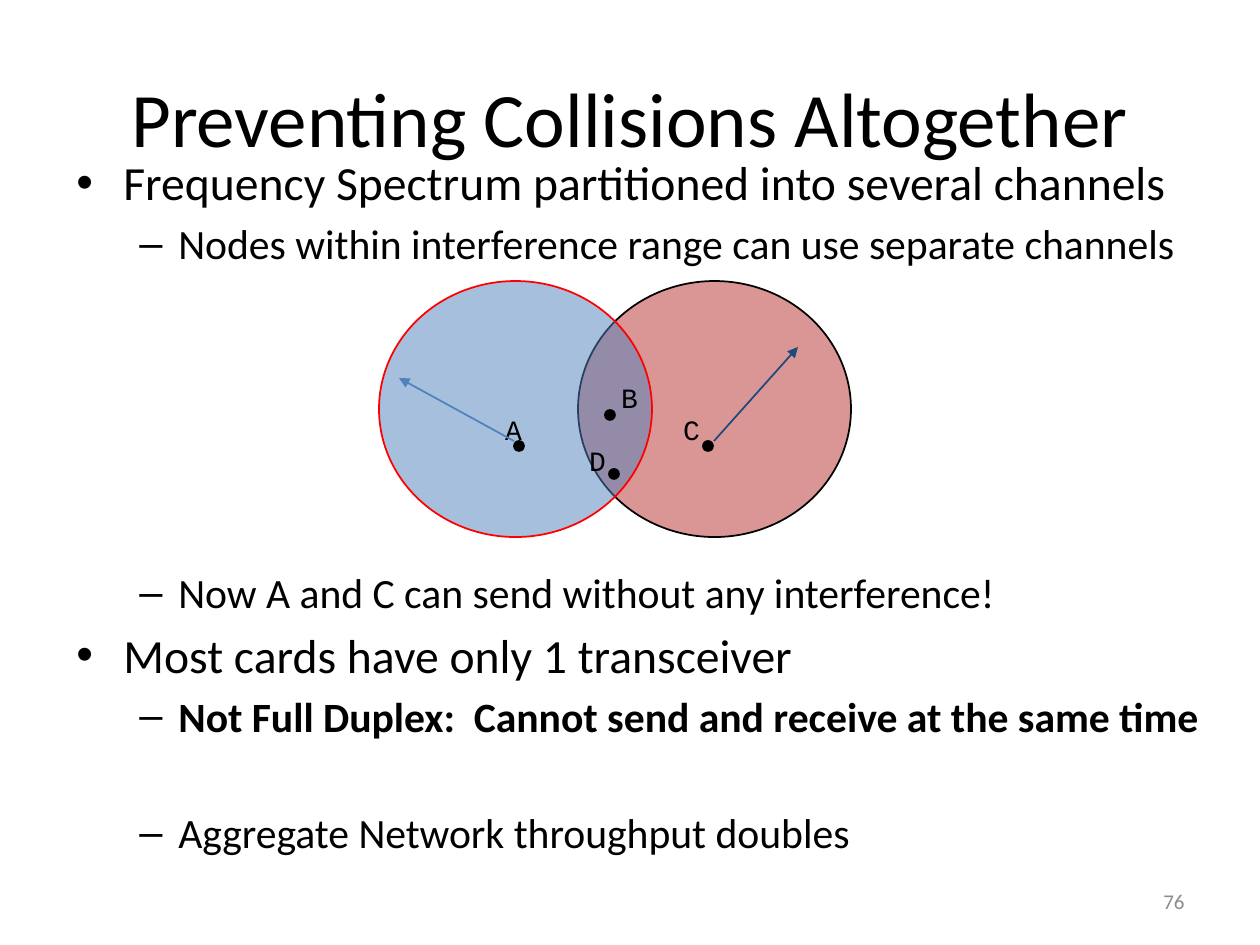
from lxml.etree import SubElement
from pptx import Presentation
from pptx.dml.color import RGBColor
from pptx.enum.shapes import MSO_CONNECTOR, MSO_SHAPE
from pptx.enum.text import MSO_ANCHOR, PP_ALIGN
from pptx.oxml.ns import qn
from pptx.util import Emu, Inches, Pt

PX_PER_INCH = 126
BLACK = RGBColor(0x00, 0x00, 0x00)
RED = RGBColor(0xFF, 0x00, 0x00)
ROSE = RGBColor(0xD9, 0x96, 0x94)
BLUE = RGBColor(0x4F, 0x81, 0xBD)
NAVY = RGBColor(0x1F, 0x49, 0x7D)
GRAY = RGBColor(0x8C, 0x8C, 0x8C)

# Bullet and size, left margin and hanging indent for each outline level
LEVELS = [("•", 27.2, 47, 47), ("–", 23.8, 102, 39)]

# Level, text, space before in points, bold
OUTLINE = [
    (0, "Frequency Spectrum partitioned into several channels", 0, False),
    (1, "Nodes within interference range can use separate channels", 4.3, False),
    (1, "Now A and C can send without any interference!", 171, False),
    (0, "Most cards have only 1 transceiver", 5, False),
    (1, "Not Full Duplex:  Cannot send and receive at the same time", 4.3, True),
    (1, "Aggregate Network throughput doubles", 37.8, False),
]

# Name, dot position, label position
NODES = [
    ("A", (514, 441), (491, 406)),
    ("B", (605, 410), (607, 374)),
    ("C", (703, 441), (669, 406)),
    ("D", (609, 469), (575, 437)),
]


def px(*lengths):
    return [Emu(round(length * 914400 / PX_PER_INCH)) for length in lengths]


class SlideBuilder:
    """Holds the text style and the slide being drawn."""

    body_font = "Calibri"
    label_font = "Courier New"

    def __init__(self, slide):
        self.slide = slide

    def style(self, paragraph, size, font=body_font, color=BLACK, align=PP_ALIGN.LEFT, bold=False):
        paragraph.alignment = align
        paragraph.font.name = font
        paragraph.font.size = Pt(size)
        paragraph.font.bold = bold
        paragraph.font.color.rgb = color

    def title(self, text, *box):
        shape = self.slide.shapes.title
        shape.left, shape.top, shape.width, shape.height = px(*box)
        shape.text_frame.text = text
        shape.text_frame.vertical_anchor = MSO_ANCHOR.MIDDLE
        self.style(shape.text_frame.paragraphs[0], 44, align=PP_ALIGN.CENTER)

    def text(self, text, box, size, wrap=True, anchor=MSO_ANCHOR.TOP, **style):
        frame = self.slide.shapes.add_textbox(*px(*box)).text_frame
        frame.word_wrap = wrap
        frame.vertical_anchor = anchor
        frame.text = text
        self.style(frame.paragraphs[0], size, **style)

    def outline(self, items, *box):
        frame = self.slide.shapes.add_textbox(*px(*box)).text_frame
        frame.word_wrap = True
        for index, (level, text, space, bold) in enumerate(items):
            paragraph = frame.add_paragraph() if index else frame.paragraphs[0]
            paragraph.text = text
            paragraph.level = level
            paragraph.space_before = Pt(space)
            bullet, size, margin, hanging = LEVELS[level]
            properties = paragraph._p.get_or_add_pPr()
            margin, hanging = px(margin, hanging)
            properties.set("marL", str(margin))
            properties.set("indent", str(-hanging))
            SubElement(properties, qn("a:buFont"), typeface="Arial")
            SubElement(properties, qn("a:buChar"), char=bullet)
            self.style(paragraph, size, bold=bold)

    def ellipse(self, box, fill, line, opacity=100):
        shape = self.slide.shapes.add_shape(MSO_SHAPE.OVAL, *px(*box))
        shape.shadow.inherit = False
        shape.fill.solid()
        shape.fill.fore_color.rgb = fill
        shape.line.color.rgb = line
        shape.line.width = Pt(1)
        if opacity < 100:
            color = shape.fill._xPr.find(qn("a:solidFill"))[0]
            SubElement(color, qn("a:alpha"), val=str(opacity * 1000))

    def arrow(self, start, end, color):
        connector = self.slide.shapes.add_connector(MSO_CONNECTOR.STRAIGHT, *px(*start, *end))
        connector.line.color.rgb = color
        connector.line.width = Pt(1)
        SubElement(connector.line._get_or_add_ln(), qn("a:tailEnd"), type="triangle")
        SubElement(connector._element.spPr, qn("a:effectLst"))


def main():
    presentation = Presentation()
    presentation.slide_width, presentation.slide_height = Inches(10), Inches(7.5)
    builder = SlideBuilder(presentation.slides.add_slide(presentation.slide_layouts[5]))

    builder.title("Preventing Collisions Altogether", 63, 38, 1134, 158)
    builder.outline(OUTLINE, 64, 147, 1166, 777)

    builder.ellipse((578, 281, 273, 256), ROSE, BLACK)
    builder.ellipse((379, 281, 273, 256), BLUE, RED, opacity=50)
    for name, dot, label in NODES:
        builder.ellipse((*dot, 10, 10), BLACK, BLACK)
        builder.text(name, (*label, 45, 45), 16, wrap=False,
                     font=builder.label_font, align=PP_ALIGN.CENTER)
    builder.arrow((714, 441), (798, 347), NAVY)
    builder.arrow((514, 441), (399, 378), BLUE)

    builder.text("76", (903, 876, 294, 50), 12, anchor=MSO_ANCHOR.MIDDLE,
                 color=GRAY, align=PP_ALIGN.RIGHT)
    presentation.save("out.pptx")


if __name__ == "__main__":
    main()
